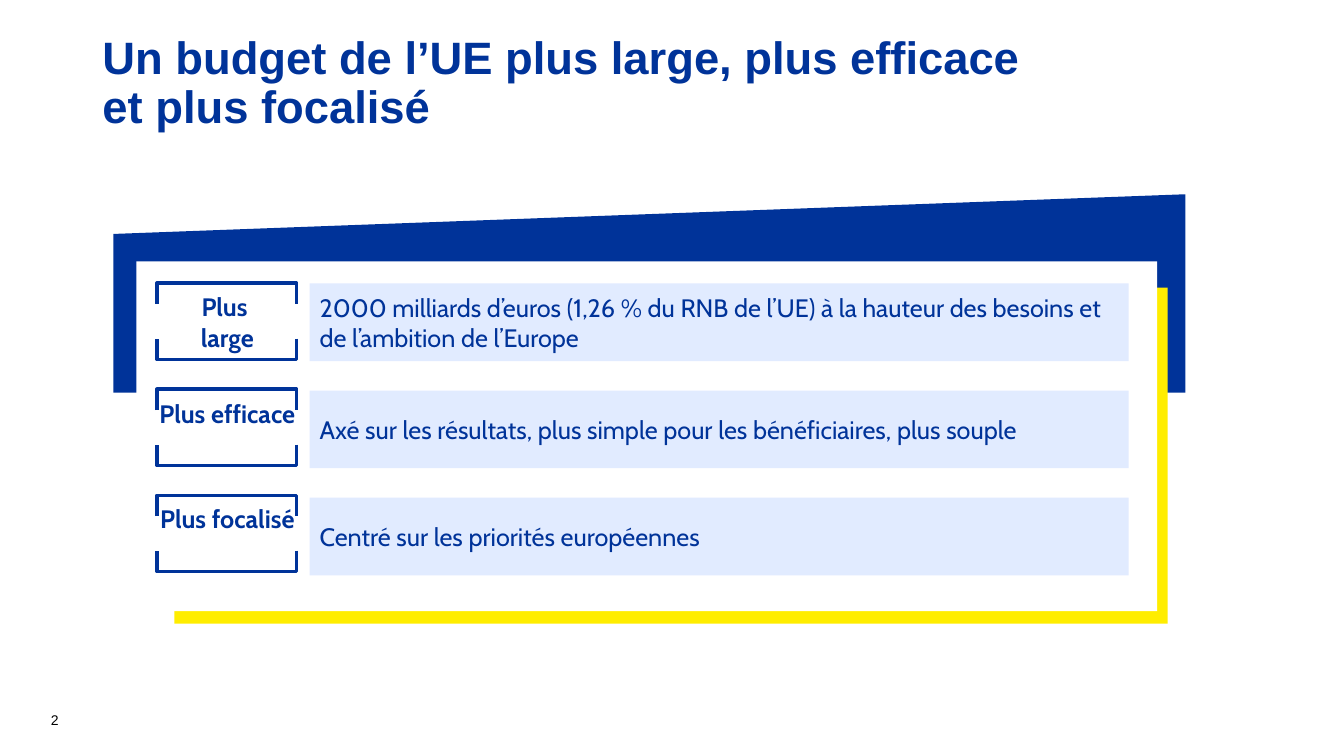
from copy import deepcopy
from dataclasses import dataclass

from pptx import Presentation
from pptx.dml.color import RGBColor
from pptx.enum.shapes import MSO_SHAPE
from pptx.enum.text import MSO_ANCHOR, MSO_AUTO_SIZE, PP_ALIGN
from pptx.oxml.ns import qn
from pptx.shapes.autoshape import Shape
from pptx.slide import Slide
from pptx.util import Pt

PX = 9525
BLUE = RGBColor(0x00, 0x33, 0x99)
YELLOW = RGBColor(0xFF, 0xED, 0x00)
PALE_BLUE = RGBColor(0xE1, 0xEB, 0xFF)
WHITE = RGBColor(0xFF, 0xFF, 0xFF)
BLACK = RGBColor(0x00, 0x00, 0x00)

ROW_PITCH = 102
BRACKET_PITCH = 101
BRACKET_LEFT = 206
BRACKET_WIDTH = 20
LABEL_LEFT = 150
LABEL_WIDTH = 133


@dataclass(frozen=True)
class Box:
    left: int
    top: int
    width: int
    height: int

    def emu(self) -> tuple[int, int, int, int]:
        return (self.left * PX, self.top * PX, self.width * PX, self.height * PX)


@dataclass(frozen=True)
class Panel:
    kind: MSO_SHAPE
    box: Box
    color: RGBColor


@dataclass(frozen=True)
class Goal:
    label: str
    label_top: int
    detail: str


@dataclass(frozen=True)
class Style:
    font: dict
    frame: dict
    paragraph: dict
    color: RGBColor = BLUE


PANELS = (
    Panel(MSO_SHAPE.FLOWCHART_MANUAL_INPUT, Box(108, 185, 1021, 189), BLUE),
    Panel(MSO_SHAPE.RECTANGLE, Box(166, 274, 946, 320), YELLOW),
    Panel(MSO_SHAPE.RECTANGLE, Box(130, 249, 972, 333), WHITE),
)

GOALS = (
    Goal("Plus \vlarge", 273,
         "2000 milliards d’euros (1,26 % du RNB de l’UE) à la hauteur "
         "des besoins et de l’ambition de l’Europe"),
    Goal("Plus efficace", 375,
         "Axé sur les résultats, plus simple pour les bénéficiaires, plus souple"),
    Goal("Plus focalisé", 475, "Centré sur les priorités européennes"),
)

TITLE = Style(
    {"name": "Arial", "size": Pt(32.4), "bold": True},
    {"vertical_anchor": MSO_ANCHOR.MIDDLE},
    {"alignment": PP_ALIGN.LEFT, "line_spacing": 0.9},
)
DETAIL = Style(
    {"name": "Cabin", "size": Pt(18)},
    {"vertical_anchor": MSO_ANCHOR.MIDDLE, "margin_top": 0, "margin_bottom": 0},
    {"alignment": PP_ALIGN.LEFT},
)
LABEL = Style(
    {"name": "Cabin", "size": Pt(18), "bold": True},
    {"vertical_anchor": MSO_ANCHOR.TOP, "margin_left": 0, "margin_right": 0},
    {"alignment": PP_ALIGN.CENTER},
)
PAGE_NUMBER = Style(
    {"name": "Arial", "size": Pt(10)},
    {"vertical_anchor": MSO_ANCHOR.BOTTOM},
    {"alignment": PP_ALIGN.LEFT},
    BLACK,
)


def apply(target: object, values: dict) -> None:
    for attribute, value in values.items():
        setattr(target, attribute, value)


def write(shape: Shape, text: str, style: Style) -> None:
    frame = shape.text_frame
    frame.text = text
    apply(frame, {"word_wrap": True, "auto_size": MSO_AUTO_SIZE.NONE} | style.frame)
    paragraph = frame.paragraphs[0]
    apply(paragraph, style.paragraph)
    for run in paragraph.runs:
        apply(run.font, style.font)
        run.font.color.rgb = style.color
    for line_break in paragraph._p.findall(qn("a:br")):
        line_break.insert(0, deepcopy(paragraph.runs[0]._r.rPr))


def add_panel(slide: Slide, panel: Panel) -> Shape:
    shape = slide.shapes.add_shape(panel.kind, *panel.box.emu())
    shape.shadow.inherit = False
    shape.fill.solid()
    shape.fill.fore_color.rgb = panel.color
    shape.line.fill.background()
    return shape


def add_text(slide: Slide, box: Box, text: str, style: Style) -> None:
    write(slide.shapes.add_textbox(*box.emu()), text, style)


def add_bracket(slide: Slide, top: int, rotation: int) -> None:
    box = Box(BRACKET_LEFT, top, BRACKET_WIDTH, LABEL_WIDTH)
    bracket = slide.shapes.add_shape(MSO_SHAPE.LEFT_BRACKET, *box.emu())
    bracket.adjustments[0] = 0
    bracket.rotation = rotation
    bracket.shadow.inherit = False
    bracket.fill.background()
    bracket.line.color.rgb = BLUE
    bracket.line.width = Pt(2.25)


def add_goal(slide: Slide, index: int, goal: Goal) -> None:
    detail_box = Box(295, 270 + index * ROW_PITCH, 780, 74)
    detail = add_panel(slide, Panel(MSO_SHAPE.RECTANGLE, detail_box, PALE_BLUE))
    write(detail, goal.detail, DETAIL)
    add_text(slide, Box(LABEL_LEFT, goal.label_top, LABEL_WIDTH, 54), goal.label, LABEL)
    for first_top, rotation in ((266, 270), (213, 90)):
        add_bracket(slide, first_top + index * BRACKET_PITCH, rotation)


def main() -> None:
    deck = Presentation()
    apply(deck, {"slide_width": 1280 * PX, "slide_height": 720 * PX})
    slide = deck.slides.add_slide(deck.slide_layouts[5])

    title = slide.shapes.title
    title_box = Box(88, 38, 1104, 85)
    apply(title, dict(zip(("left", "top", "width", "height"), title_box.emu())))
    write(title, "Un budget de l’UE plus large, plus efficace \vet plus focalisé", TITLE)

    for panel in PANELS:
        add_panel(slide, panel)
    for index, goal in enumerate(GOALS):
        add_goal(slide, index, goal)
    add_text(slide, Box(39, 660, 288, 38), "2", PAGE_NUMBER)
    deck.save("out.pptx")


if __name__ == "__main__":
    main()
